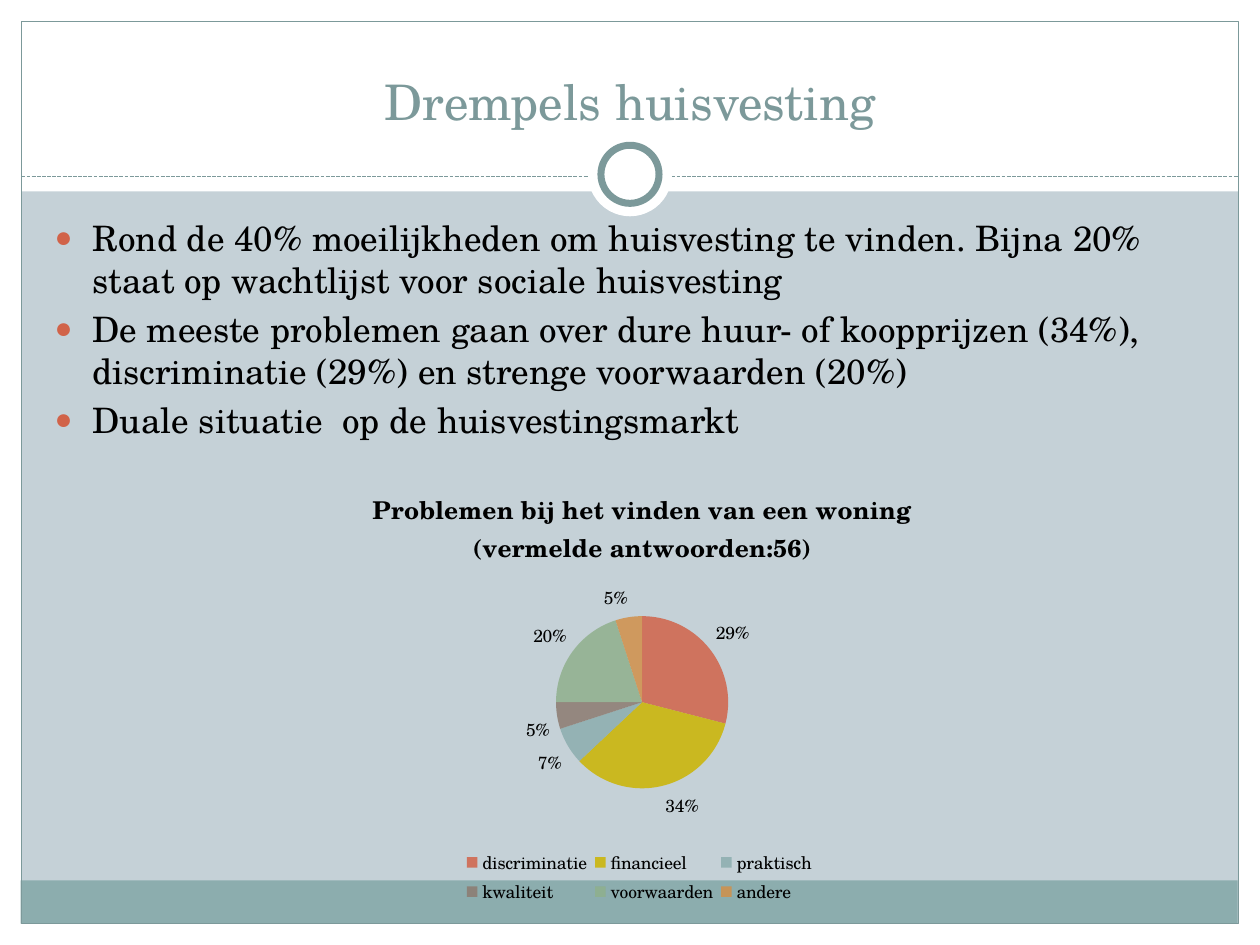
"""Build the slide about housing barriers, with its bullets and pie chart."""
import lxml.etree
import pptx
import pptx.chart.data
import pptx.dml.color
import pptx.enum.chart
import pptx.enum.dml
import pptx.enum.shapes
import pptx.enum.text
import pptx.oxml
import pptx.oxml.ns
import pptx.util

Pt = pptx.util.Pt
qn = pptx.oxml.ns.qn
SHAPE = pptx.enum.shapes.MSO_SHAPE
FONT = "TeX Gyre Schola"
COLORS = {"bg": "C5D1D7", "white": "FFFFFF", "band": "8CADAE", "line": "7C999A",
          "text": "000000", "bullet": "D16349"}


def rgb(value):
    return pptx.dml.color.RGBColor.from_string(value)


def style_font(font, size, color):
    font.name = FONT
    font.size = Pt(size)
    font.bold = False
    font.color.rgb = rgb(color)


prs = pptx.Presentation()
prs.slide_width, prs.slide_height = Pt(720), Pt(540)
s = prs.slides.add_slide(prs.slide_layouts[1])
s.background.fill.solid()
s.background.fill.fore_color.rgb = rgb(COLORS["bg"])

frame_shapes = [
    (SHAPE.RECTANGLE, 0, 527.76, 720, 12.24, "white", 0),
    (SHAPE.RECTANGLE, 0, 0, 720, 109.44, "white", 0),
    (SHAPE.RECTANGLE, 0, 0, 12.24, 540, "white", 0),
    (SHAPE.RECTANGLE, 707.76, 0, 12.24, 540, "white", 0),
    (SHAPE.RECTANGLE, 11.8, 503, 695.5, 24.76, "band", 0),
    (SHAPE.RECTANGLE, 12.24, 12.24, 695.52, 515.52, None, 0.75),
    (SHAPE.OVAL, 336, 75.6, 48, 48, "white", 0),
    (SHAPE.OVAL, 343.4, 83, 33.2, 33.2, "white", 4),
]
for kind, x, y, w, h, fill, width in frame_shapes:
    sp = s.shapes.add_shape(kind, Pt(x), Pt(y), Pt(w), Pt(h))
    sp.shadow.inherit = False
    if fill:
        sp.fill.solid()
        sp.fill.fore_color.rgb = rgb(COLORS[fill])
    else:
        sp.fill.background()
    if width:
        sp.line.color.rgb = rgb(COLORS["line"])
        sp.line.width = Pt(width)
    else:
        sp.line.fill.background()
    if kind == SHAPE.RECTANGLE and width:
        divider = s.shapes.add_connector(
            pptx.enum.shapes.MSO_CONNECTOR.STRAIGHT,
            Pt(12.24), Pt(100.8), Pt(707.76), Pt(100.8))
        divider.line.color.rgb = rgb(COLORS["line"])
        divider.line.width = Pt(0.75)
        divider.line.dash_style = pptx.enum.dml.MSO_LINE.SQUARE_DOT
        lxml.etree.SubElement(divider.element.spPr, qn("a:effectLst"))

title, body = s.placeholders
boxes = [(title, 24, 18, 672, 60, pptx.enum.text.MSO_ANCHOR.BOTTOM),
         (body, 24, 120, 669.6, 360, pptx.enum.text.MSO_ANCHOR.TOP)]
for sp, x, y, w, h, anchor in boxes:
    sp.left, sp.top, sp.width, sp.height = Pt(x), Pt(y), Pt(w), Pt(h)
    sp.text_frame.auto_size = pptx.enum.text.MSO_AUTO_SIZE.NONE
    sp.text_frame.word_wrap = True
    sp.text_frame.vertical_anchor = anchor
    sp.element.getparent().append(sp.element)

p = title.text_frame.paragraphs[0]
p.alignment = pptx.enum.text.PP_ALIGN.CENTER
r = p.add_run()
r.text = "Drempels huisvesting"
style_font(r.font, 28, COLORS["line"])

bullets = [
    "Rond de 40% moeilijkheden om huisvesting te vinden. Bijna 20% "
    "staat op wachtlijst voor sociale huisvesting",
    "De meeste problemen gaan over dure huur- of koopprijzen (34%), "
    "discriminatie (29%) en strenge voorwaarden (20%)",
    "Duale situatie  op de huisvestingsmarkt",
]
tf = body.text_frame
for i, text in enumerate(bullets):
    p = tf.add_paragraph() if i else tf.paragraphs[0]
    r = p.add_run()
    r.text = text
    style_font(r.font, 20, COLORS["text"])
    p.space_before = Pt(4)
    pPr = p._p.get_or_add_pPr()
    pPr.set("marL", str(Pt(21.6)))
    pPr.set("indent", str(Pt(-21.6)))
    color = lxml.etree.SubElement(pPr, qn("a:buClr"))
    lxml.etree.SubElement(color, qn("a:srgbClr"), val=COLORS["bullet"])
    lxml.etree.SubElement(pPr, qn("a:buSzPct"), val="85000")
    lxml.etree.SubElement(pPr, qn("a:buChar"), char="●")

slices = [("discriminatie", 0.29, "D16349"), ("financieel", 0.34, "CCB400"),
          ("praktisch", 0.07, "8CADAE"), ("kwaliteit", 0.05, "8C7B70"),
          ("voorwaarden", 0.2, "8FB08C"), ("andere", 0.05, "D19049")]
data = pptx.chart.data.CategoryChartData(number_format="0%")
data.categories = [name for name, value, color in slices]
data.add_series("Series 1", [value for name, value, color in slices])
chart = s.shapes.add_chart(
    pptx.enum.chart.XL_CHART_TYPE.PIE,
    Pt(167), Pt(264.2), Pt(396.7), Pt(254.9), data).chart
style_font(chart.font, 10, COLORS["text"])

chart.has_title = True
tf = chart.chart_title.text_frame
for i, text in enumerate(["Problemen bij het vinden van een woning",
                          "(vermelde antwoorden:56)"]):
    p = tf.add_paragraph() if i else tf.paragraphs[0]
    p.alignment = pptx.enum.text.PP_ALIGN.CENTER
    r = p.add_run()
    r.text = text
    style_font(r.font, 14, COLORS["text"])
    r.font.bold = True

chart.has_legend = True
chart.legend.position = pptx.enum.chart.XL_LEGEND_POSITION.BOTTOM
chart.legend.include_in_layout = False
style_font(chart.legend.font, 10, COLORS["text"])

plot = chart.plots[0]
plot.vary_by_categories = True
plot.has_data_labels = True
labels = plot.data_labels
labels.show_value = True
labels.show_percentage = False
labels.number_format = "0%"
labels.number_format_is_linked = False
labels.position = pptx.enum.chart.XL_LABEL_POSITION.OUTSIDE_END
style_font(labels.font, 10, COLORS["text"])
for i, (name, value, color) in enumerate(slices):
    point = plot.series[0].points[i].format
    point.fill.solid()
    point.fill.fore_color.rgb = rgb(color)
    point.line.fill.background()
    for clr in point.fill._xPr.iter(qn("a:srgbClr")):
        lxml.etree.SubElement(clr, qn("a:alpha"), val="85000")

layouts = [("c:title", 1, {"x": 0.11, "y": 0.05}),
           ("c:plotArea", 0, {"x": 0.38, "y": 0.345, "w": 0.248, "h": 0.386}),
           ("c:legend", 1, {"x": 0.24, "y": 0.86, "w": 0.52, "h": 0.14})]
for tag, index, values in layouts:
    part = chart.element.chart.find(qn(tag))
    for old in part.findall(qn("c:layout")):
        part.remove(old)
    layout = pptx.oxml.parse_xml(
        f'<c:layout {pptx.oxml.ns.nsdecls("c")}><c:manualLayout/></c:layout>')
    manual = layout[0]
    if tag == "c:plotArea":
        lxml.etree.SubElement(manual, qn("c:layoutTarget"), val="inner")
    for axis in "xy":
        lxml.etree.SubElement(manual, qn(f"c:{axis}Mode"), val="edge")
    for key, value in values.items():
        lxml.etree.SubElement(manual, qn(f"c:{key}"), val=str(value))
    part.insert(index, layout)

prs.save("out.pptx")
